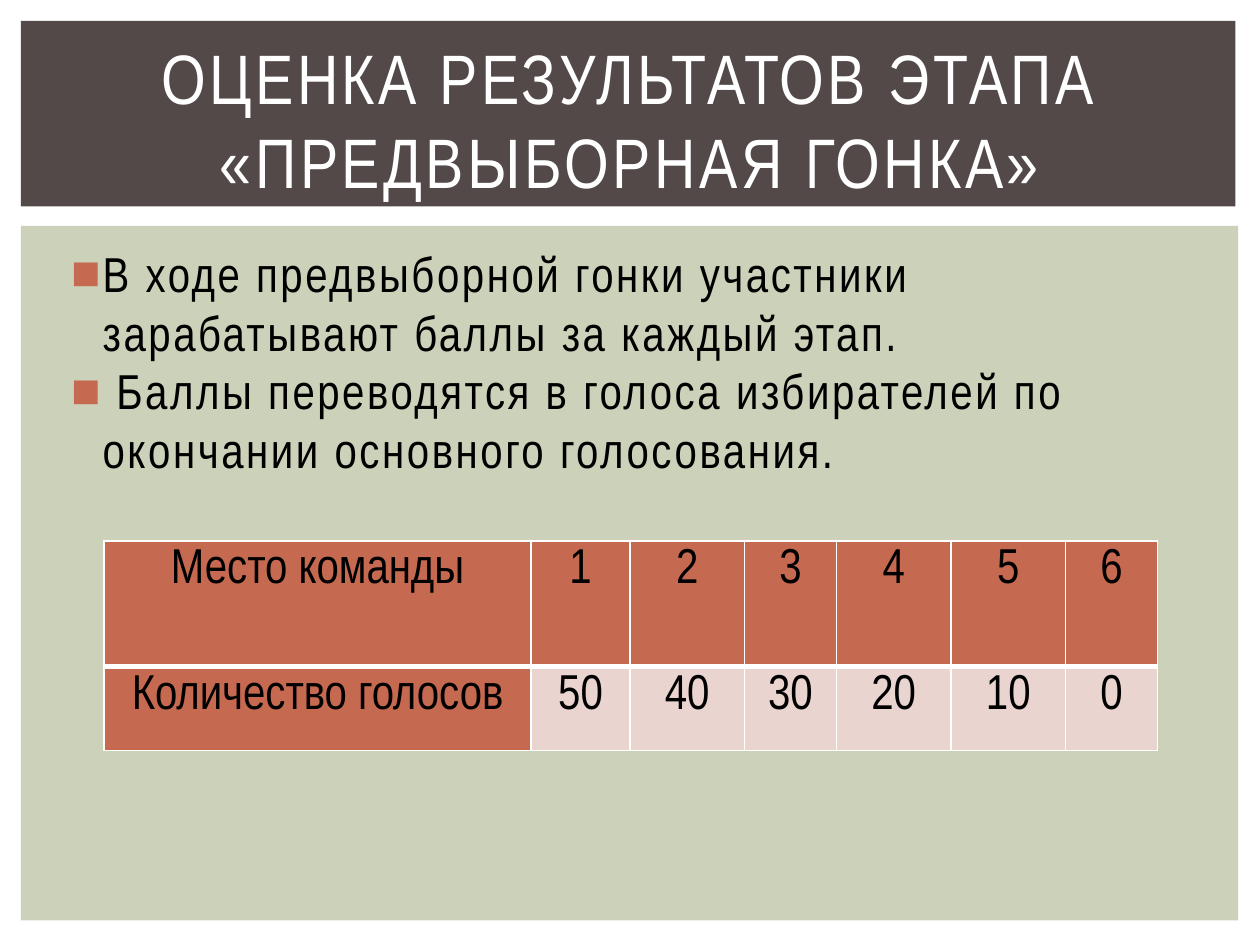
import pptx
import pptx.dml.color
import pptx.enum.shapes
import pptx.enum.text
import pptx.oxml
import pptx.oxml.ns
import pptx.util

Pt = pptx.util.Pt
RGBColor = pptx.dml.color.RGBColor
Align = pptx.enum.text.PP_ALIGN
Anchor = pptx.enum.text.MSO_ANCHOR

WHITE = RGBColor(0xFF, 0xFF, 0xFF)
BLACK = RGBColor(0x00, 0x00, 0x00)
BROWN = RGBColor(0x53, 0x49, 0x49)
SAGE = RGBColor(0xCC, 0xD1, 0xB9)
TERRACOTTA = RGBColor(0xC6, 0x69, 0x51)
PALE_PINK = RGBColor(0xEA, 0xD4, 0xD0)
NAMESPACE = pptx.oxml.ns.nsdecls("a")


class SlideBuilder:
    font_name = "Arial Narrow"

    def __init__(self, slide):
        self.slide = slide

    def panel(self, left, top, width, height, color):
        shape = self.slide.shapes.add_shape(
            pptx.enum.shapes.MSO_SHAPE.RECTANGLE, Pt(left), Pt(top), Pt(width), Pt(height))
        shape.shadow.inherit = False
        shape.fill.solid()
        shape.fill.fore_color.rgb = color
        shape.line.fill.background()

    def format_runs(self, paragraph, size, color, spacing=0):
        for run in paragraph.runs:
            run.font.name = self.font_name
            run.font.size = Pt(size)
            run.font.color.rgb = color
            if spacing:
                run.font._element.set("spc", str(int(spacing * 100)))

    def text(self, left, top, width, height, lines, size, color, spacing,
             align=Align.LEFT, anchor=Anchor.TOP, bullet_color=None):
        shape = self.slide.shapes.add_textbox(Pt(left), Pt(top), Pt(width), Pt(height))
        frame = shape.text_frame
        frame.word_wrap = True
        frame.vertical_anchor = anchor
        frame.text = "\n".join(lines)
        for paragraph in frame.paragraphs:
            paragraph.alignment = align
            self.format_runs(paragraph, size, color, spacing)
            if bullet_color is not None:
                self.bullet(paragraph, bullet_color)

    def bullet(self, paragraph, color):
        properties = paragraph._p.get_or_add_pPr()
        properties.set("marL", str(Pt(21.6)))
        properties.set("indent", str(Pt(-18)))
        for xml in (f'<a:buClr {NAMESPACE}><a:srgbClr val="{color}"/></a:buClr>',
                    f'<a:buFont {NAMESPACE} typeface="Arial"/>',
                    f'<a:buChar {NAMESPACE} char="■"/>'):
            properties.append(pptx.oxml.parse_xml(xml))

    def table(self, left, top, widths, heights, rows, size):
        table = self.slide.shapes.add_table(
            len(rows), len(widths), Pt(left), Pt(top),
            Pt(sum(widths)), Pt(sum(heights))).table
        for column, width in zip(table.columns, widths):
            column.width = Pt(width)
        for row, height in zip(table.rows, heights):
            row.height = Pt(height)
        for row_index, values in enumerate(rows):
            for column_index, value in enumerate(values):
                is_header = row_index == 0 or column_index == 0
                self.cell(table.cell(row_index, column_index), value, size,
                          TERRACOTTA if is_header else PALE_PINK,
                          top_line=1 if row_index == 0 else 3,
                          bottom_line=3 if row_index == 0 else 1)

    def cell(self, cell, value, size, color, top_line, bottom_line):
        cell.margin_left = cell.margin_right = Pt(5)
        cell.margin_top = cell.margin_bottom = 0
        cell.fill.solid()
        cell.fill.fore_color.rgb = color
        paragraph = cell.text_frame.paragraphs[0]
        paragraph.text = value
        paragraph.alignment = Align.CENTER
        paragraph.line_spacing = 1.15
        self.format_runs(paragraph, size, BLACK)
        # Borders come before the fill in the cell properties
        borders = {"lnL": 1, "lnR": 1, "lnT": top_line, "lnB": bottom_line}
        properties = cell._tc.get_or_add_tcPr()
        for index, (tag, width) in enumerate(borders.items()):
            properties.insert(index, pptx.oxml.parse_xml(
                f'<a:{tag} {NAMESPACE} w="{Pt(width)}"><a:solidFill>'
                f'<a:srgbClr val="{WHITE}"/></a:solidFill></a:{tag}>'))


def main():
    presentation = pptx.Presentation()
    presentation.slide_width = Pt(720)
    presentation.slide_height = Pt(540)
    slide = presentation.slides.add_slide(presentation.slide_layouts[6])
    builder = SlideBuilder(slide)

    # Background panels
    builder.panel(12, 129, 695.5, 397, SAGE)
    builder.panel(12, 12, 694, 106, BROWN)

    # Rules
    builder.text(30, 135.5, 662, 347, [
        "В ходе предвыборной гонки участники зарабатывают баллы за каждый этап.",
        " Баллы переводятся в голоса избирателей по окончании основного голосования.",
    ], 28, BLACK, 1.5, bullet_color=TERRACOTTA)

    # Title
    builder.text(30, 26, 660, 83, ["ОЦЕНКА РЕЗУЛЬТАТОВ ЭТАПА «ПРЕДВЫБОРНАЯ ГОНКА»"],
                 40, WHITE, 2, Align.CENTER, Anchor.MIDDLE)

    # Votes for each place
    builder.table(59.5, 309, [244, 56.5, 65.5, 52.5, 65.5, 65.5, 52.5], [72, 48], [
        ["Место команды", "1", "2", "3", "4", "5", "6"],
        ["Количество голосов", "50", "40", "30", "20", "10", "0"],
    ], 28)

    presentation.save("out.pptx")


if __name__ == "__main__":
    main()
